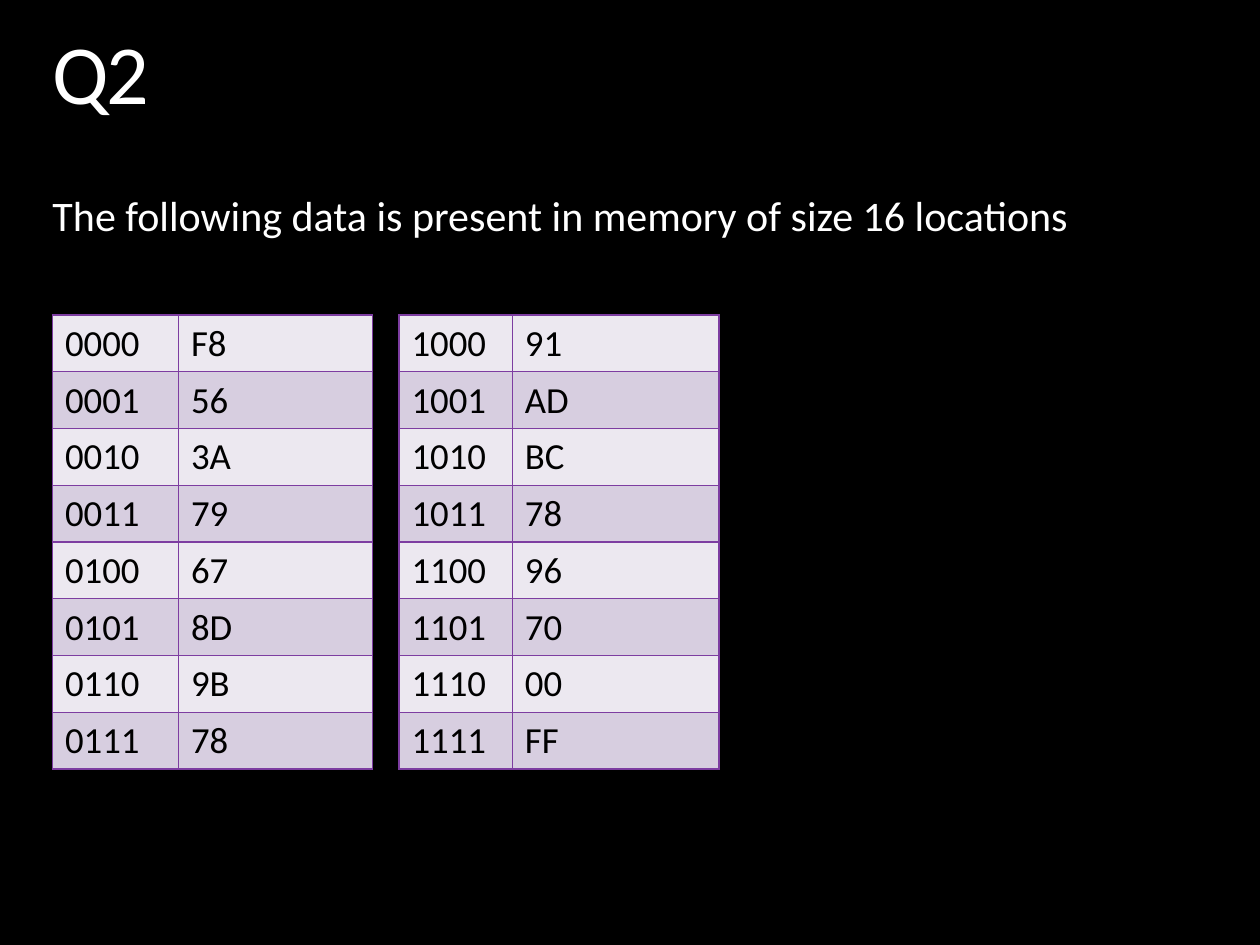
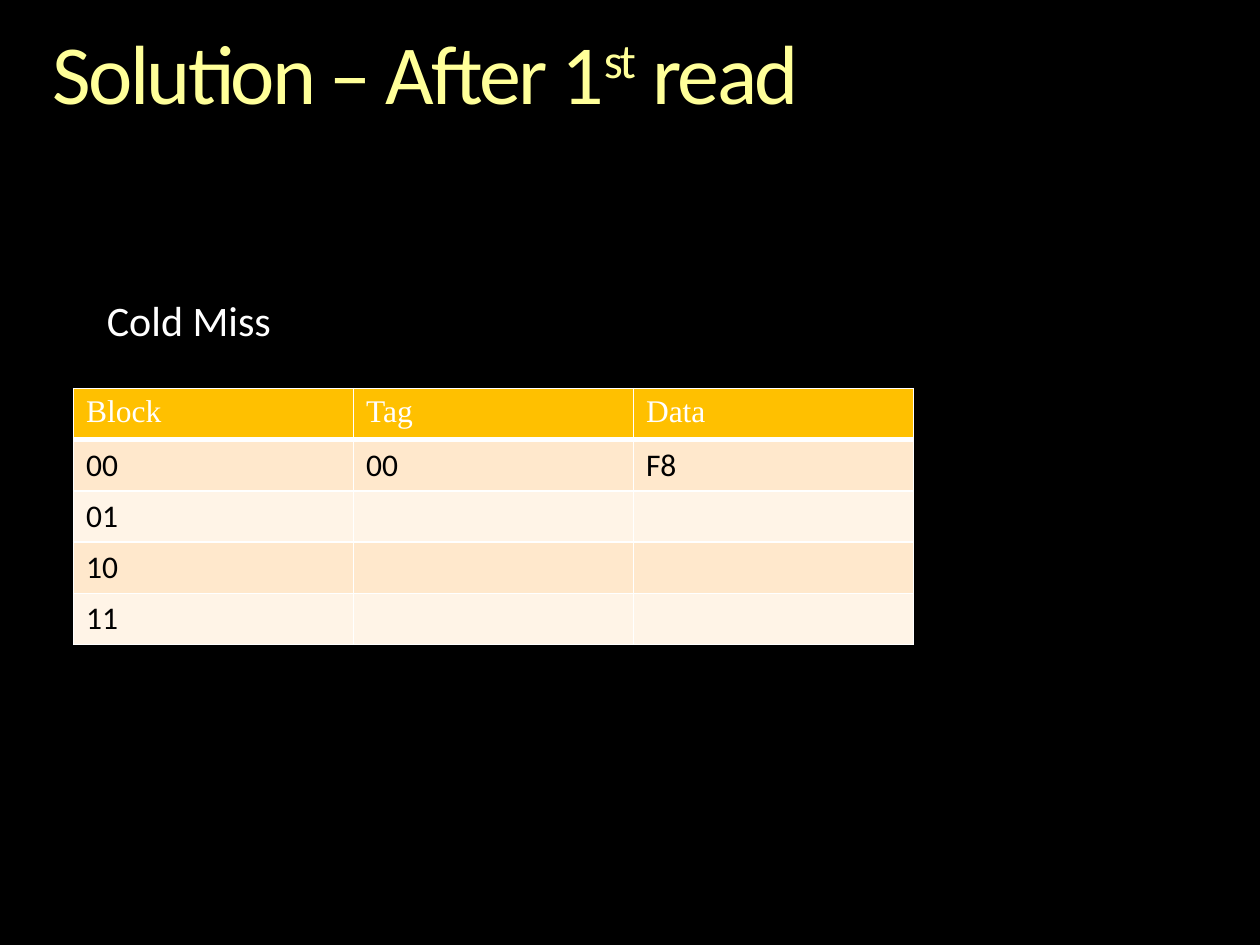
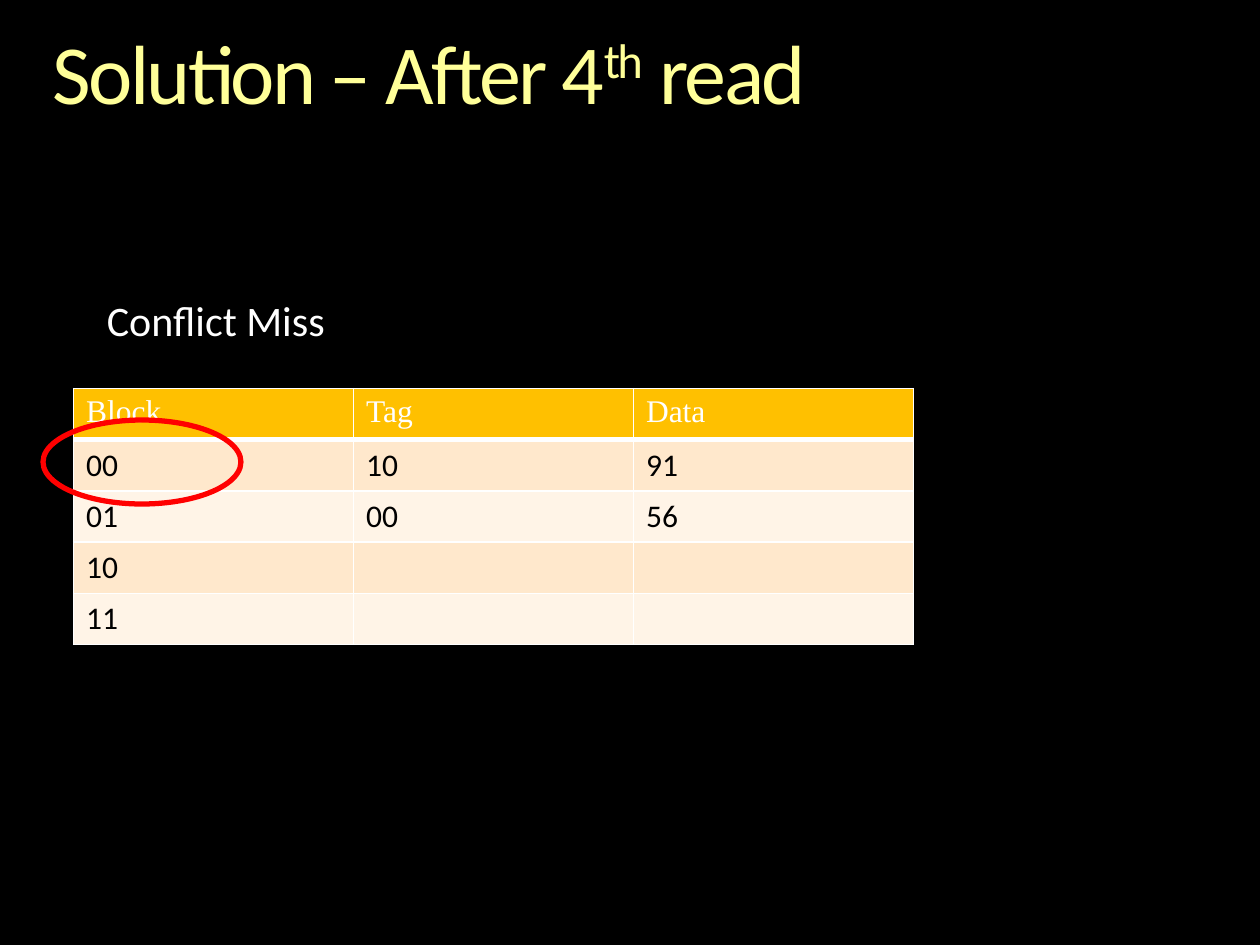
from collections import namedtuple

from lxml import etree
from pptx import Presentation
from pptx.dml.color import RGBColor
from pptx.enum.shapes import MSO_SHAPE
from pptx.enum.text import PP_ALIGN
from pptx.oxml.ns import qn
from pptx.util import Inches, Pt

# Grid: 24 columns by 18 rows of square units on a 10 by 7.5 inch slide
WIDTH, HEIGHT = Inches(10), Inches(7.5)
UNIT = WIDTH / 24
Box = namedtuple("Box", "left top width height")

TITLE_BOX = Box(1, 0.6, 22, 1.75)
BODY_BOX = Box(1, 3.72, 22, 5.8)
CAPTION_BOX = Box(1.8, 5.5, 8.6, 1.2)
CACHE_BOX = Box(1.4, 7.4, 16, 4.88)

BLACK, WHITE, RED = "000000", "FFFFFF", "FF0000"
PALE_YELLOW, AMBER, PURPLE = "FFFF99", "FFC000", "7D3DA1"
LILAC_BANDS = ("ECE8F0", "D7CEE0")
PEACH_BANDS = ("FFE8CC", "FFF4E7")

NO_INSETS = (0, 0)
DEFAULT_INSETS = (0.1, 0.05)


def color(hex_string):
    return RGBColor.from_string(hex_string)


def units(*values):
    return [round(value * UNIT) for value in values]


def write(frame, text, size=18, font="Calibri", fill=BLACK, align=None,
          line_spacing=None, tracking=None, insets=DEFAULT_INSETS):
    """Fill a frame with one paragraph; parts between ^ marks are raised."""
    frame.word_wrap = True
    frame.margin_left = frame.margin_right = Inches(insets[0])
    frame.margin_top = frame.margin_bottom = Inches(insets[1])
    paragraph = frame.paragraphs[0]
    paragraph.alignment = align
    paragraph.line_spacing = line_spacing
    for index, part in enumerate(text.split("^")):
        run = paragraph.add_run()
        run.text = part
        run.font.size = Pt(size)
        run.font.name = font
        run.font.color.rgb = color(fill)
        properties = run._r.get_or_add_rPr()
        if tracking:
            properties.set("spc", str(round(tracking * 100)))
        if index % 2:
            properties.set("baseline", "30000")


def add_text(slide, box, text, **style):
    shape = slide.shapes.add_textbox(*units(*box))
    write(shape.text_frame, text, **style)


def add_slide(presentation, title, title_color):
    slide = presentation.slides.add_slide(presentation.slide_layouts[6])
    slide.background.fill.solid()
    slide.background.fill.fore_color.rgb = color(BLACK)
    add_text(slide, TITLE_BOX, title, size=48, fill=title_color,
             line_spacing=0.9, tracking=-1.5, insets=NO_INSETS)
    return slide


def set_borders(cell, hex_string, bottom=1):
    properties = cell._tc.get_or_add_tcPr()
    for side, points in (("L", 1), ("R", 1), ("T", 1), ("B", bottom)):
        line = etree.SubElement(properties, qn(f"a:ln{side}"), w=str(Pt(points)))
        fill = etree.SubElement(line, qn("a:solidFill"))
        etree.SubElement(fill, qn("a:srgbClr"), val=hex_string)


def add_grid(slide, box, rows, column_widths, bands, border, header=None, **style):
    """Table with alternating row fills; header holds the first row's style."""
    table = slide.shapes.add_table(len(rows), len(column_widths), *units(*box)).table
    table.first_row = header is not None
    table.horz_banding = False
    for column, width in zip(table.columns, units(*column_widths)):
        column.width = width
    for index, values in enumerate(rows):
        table.rows[index].height = units(box.height / len(rows))[0]
        is_header = header is not None and index == 0
        band = AMBER if is_header else bands[(index - table.first_row) % 2]
        for cell, text in zip(table.rows[index].cells, values):
            set_borders(cell, border, bottom=3 if is_header else 1)
            cell.fill.solid()
            cell.fill.fore_color.rgb = color(band)
            if text:
                write(cell.text_frame, text, **(header if is_header else style))


def add_memory_half(slide, box, first_address, values, address_width):
    rows = [(f"{first_address + offset:04b}", value)
            for offset, value in enumerate(values)]
    add_grid(slide, box, rows, (address_width, box.width - address_width),
             LILAC_BANDS, PURPLE, size=21, insets=(0.07, 0.04))


def add_question_slide(presentation):
    slide = add_slide(presentation, "Q2", WHITE)
    add_text(slide, BODY_BOX,
             "The following data is present in memory of size 16 locations",
             size=24, fill=WHITE, line_spacing=0.9, insets=NO_INSETS)
    # Memory contents, eight locations a table
    add_memory_half(slide, Box(1, 6, 6.1, 8), 0,
                    "F8 56 3A 79 67 8D 9B 78".split(), 2.4)
    add_memory_half(slide, Box(7.6, 6, 6.1, 8), 8,
                    "91 AD BC 78 96 70 00 FF".split(), 2.16)


def add_solution_slide(presentation, title, caption, contents):
    """Cache state: contents maps a block number to its tag and data."""
    slide = add_slide(presentation, title, PALE_YELLOW)
    rows = [("Block", "Tag", "Data")]
    rows += [(f"{block:02b}", *contents.get(block, ("", ""))) for block in range(4)]
    header = dict(font="Times New Roman", fill=WHITE, align=PP_ALIGN.JUSTIFY,
                  insets=(0.07, 0))
    add_grid(slide, CACHE_BOX, rows, [CACHE_BOX.width / 3] * 3,
             PEACH_BANDS, WHITE, header=header)
    add_text(slide, CAPTION_BOX, caption, size=24, fill=WHITE)
    return slide


def circle_first_block(slide, table_box):
    ring = Box(table_box.left - 0.58, table_box.top + 0.6, 3.77, 1.6)
    shape = slide.shapes.add_shape(MSO_SHAPE.OVAL, *units(*ring))
    shape.shadow.inherit = False
    shape.fill.background()
    shape.line.color.rgb = color(RED)
    shape.line.width = Pt(3)


def main():
    presentation = Presentation()
    presentation.slide_width, presentation.slide_height = WIDTH, HEIGHT
    add_question_slide(presentation)
    add_solution_slide(presentation, "Solution – After 1^st^ read", "Cold Miss",
                       {0: ("00", "F8")})
    conflict = add_solution_slide(presentation, "Solution – After 4^th^ read",
                                  "Conflict Miss",
                                  {0: ("10", "91"), 1: ("00", "56")})
    circle_first_block(conflict, CACHE_BOX)
    presentation.save("out.pptx")


if __name__ == "__main__":
    main()
